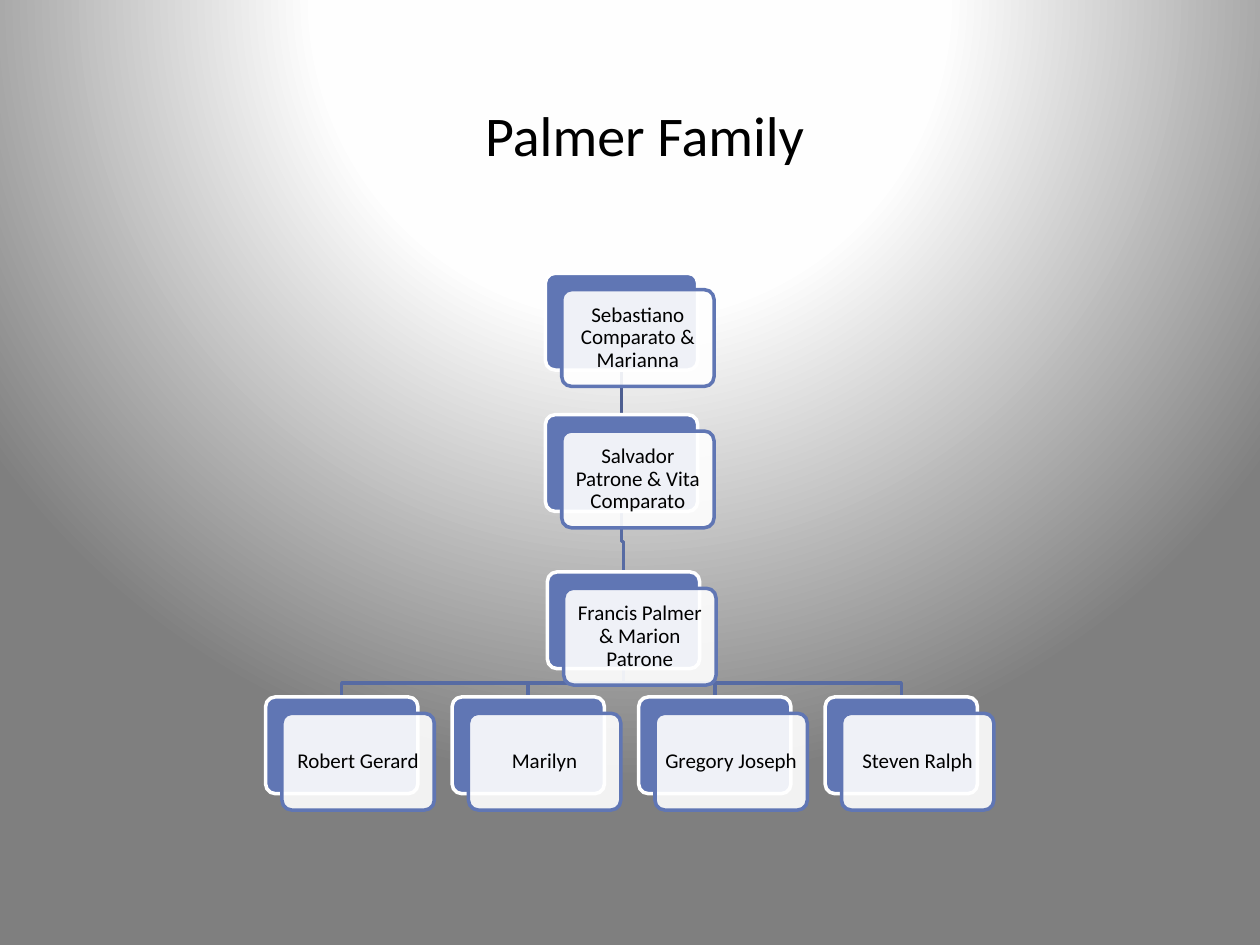
import pptx
import pptx.util
import pptx.oxml
import pptx.oxml.ns
import pptx.dml.color
import pptx.enum.shapes
import pptx.enum.text

Cm = pptx.util.Cm
Pt = pptx.util.Pt

TITLE = "Palmer Family"
# (name, row, index of parent)
PEOPLE = [
    ("Sebastiano Comparato & Marianna", 0, None),
    ("Salvador Patrone & Vita Comparato", 1, 0),
    ("Francis Palmer & Marion Patrone", 2, 1),
    ("Robert Gerard", 3, 2),
    ("Marilyn", 3, 2),
    ("Gregory Joseph", 3, 2),
    ("Steven Ralph", 3, 2),
]
# (centre x, top) of each row in cm
ROWS = [(12.53, 5.51), (12.53, 8.36), (12.57, 11.53), (12.53, 14.05)]
WIDE, HIGH, STEP, SHIFT = 3.07, 1.95, 3.76, 0.33

THEME = {
    "font": "Calibri", "ink": "000000", "title": 32, "name": 12,
    "card": "6076B4", "paper": "FFFFFF", "stem": "4D5E90", "branch": "576BA3",
    "line": 2, "alpha": 90,
    "back": [(0, "FFFFFF"), (40, "FEFEFE"), (100, "7F7F7F")],
}


def rgb(key):
    return pptx.dml.color.RGBColor.from_string(THEME[key])


def paint_back(slide):
    """Fill the slide with a round glow centred above its top edge."""
    stops = "".join(f'<a:gs pos="{pos * 1000}"><a:srgbClr val="{tint}"/></a:gs>'
                    for pos, tint in THEME["back"])
    fill = slide.background.fill
    fill.gradient()
    old = slide.element.find(".//" + pptx.oxml.ns.qn("a:gradFill"))
    new = pptx.oxml.parse_xml(
        f'<a:gradFill {pptx.oxml.ns.nsdecls("a")} rotWithShape="1">'
        f'<a:gsLst>{stops}</a:gsLst><a:path path="circle">'
        '<a:fillToRect l="50000" t="-80000" r="50000" b="180000"/>'
        '</a:path></a:gradFill>')
    old.getparent().replace(old, new)


def write(shape, text, size, anchor="TOP", inset=None, lead=None, after=None):
    frame = shape.text_frame
    frame.word_wrap = True
    frame.vertical_anchor = getattr(pptx.enum.text.MSO_ANCHOR, anchor)
    if inset is not None:
        frame.margin_left = frame.margin_right = Cm(inset)
        frame.margin_top = frame.margin_bottom = Cm(inset)
    para = frame.paragraphs[0]
    para.alignment = pptx.enum.text.PP_ALIGN.CENTER
    if lead:
        para.line_spacing = lead
    if after:
        para.space_after = Pt(after)
    run = para.add_run()
    run.text = text
    run.font.name = THEME["font"]
    run.font.size = Pt(THEME[size])
    run.font.color.rgb = rgb("ink")


def stroke(shape, key):
    shape.line.color.rgb = rgb(key)
    shape.line.width = Pt(THEME["line"])


def add_card(slide, left, top, fill, line):
    kind = pptx.enum.shapes.MSO_SHAPE.ROUNDED_RECTANGLE
    card = slide.shapes.add_shape(kind, Cm(left), Cm(top), Cm(WIDE), Cm(HIGH))
    card.adjustments[0] = 0.1
    card.shadow.inherit = False
    card.fill.solid()
    card.fill.fore_color.rgb = rgb(fill)
    stroke(card, line)
    return card


def add_name(slide, name, left, top):
    """Draw a blue card with a clear name card in front of it."""
    add_card(slide, left, top, "card", "paper")
    front = add_card(slide, left + SHIFT, top + SHIFT, "paper", "card")
    tint = front.fill._xPr.find(".//" + pptx.oxml.ns.qn("a:srgbClr"))
    alpha = pptx.oxml.parse_xml(f'<a:alpha {pptx.oxml.ns.nsdecls("a")} '
                                f'val="{THEME["alpha"] * 1000}"/>')
    tint.append(alpha)
    write(front, name, "name", anchor="MIDDLE", inset=0.12, lead=0.9, after=4.2)


def add_link(slide, start, end):
    """Join parent to child: straight if aligned, else with a half-way bend."""
    (x1, y1), (x2, y2) = start, end
    if x1 == x2:
        kind = pptx.enum.shapes.MSO_CONNECTOR.STRAIGHT
        link = slide.shapes.add_connector(kind, Cm(x1), Cm(y1), Cm(x2), Cm(y2))
        link._element.spPr.append(pptx.oxml.parse_xml(
            f'<a:effectLst {pptx.oxml.ns.nsdecls("a")}/>'))
        stroke(link, "stem")
        return
    mid = (y1 + y2) / 2
    path = slide.shapes.build_freeform(Cm(x1), Cm(y1))
    bends = [(x1, mid), (x2, mid), (x2, y2)]
    path.add_line_segments([(Cm(x), Cm(y)) for x, y in bends], close=False)
    link = path.convert_to_shape()
    link.fill.background()
    link.shadow.inherit = False
    stroke(link, "branch")


def place():
    """Return the left and top of each card, with every row centred."""
    spots = []
    for row, (mid, top) in enumerate(ROWS):
        count = sum(who[1] == row for who in PEOPLE)
        first = mid - WIDE / 2 - STEP * (count - 1) / 2
        spots += [(first + STEP * i, top) for i in range(count)]
    return spots


def main():
    deck = pptx.Presentation()
    deck.slide_width, deck.slide_height = Cm(25.4), Cm(19.05)
    slide = deck.slides.add_slide(deck.slide_layouts[6])
    paint_back(slide)
    spots = place()
    for (_, _, parent), (left, top) in reversed(list(zip(PEOPLE, spots))):
        if parent is not None:
            over, above = spots[parent]
            add_link(slide, (over + WIDE / 2, above + HIGH), (left + WIDE / 2, top))
    for (name, _, _), (left, top) in zip(PEOPLE, spots):
        add_name(slide, name, left, top)
    title = slide.shapes.add_textbox(Cm(6.55), Cm(1.9), Cm(12.9), Cm(1.07))
    write(title, TITLE, "title")
    deck.save("out.pptx")


if __name__ == "__main__":
    main()
